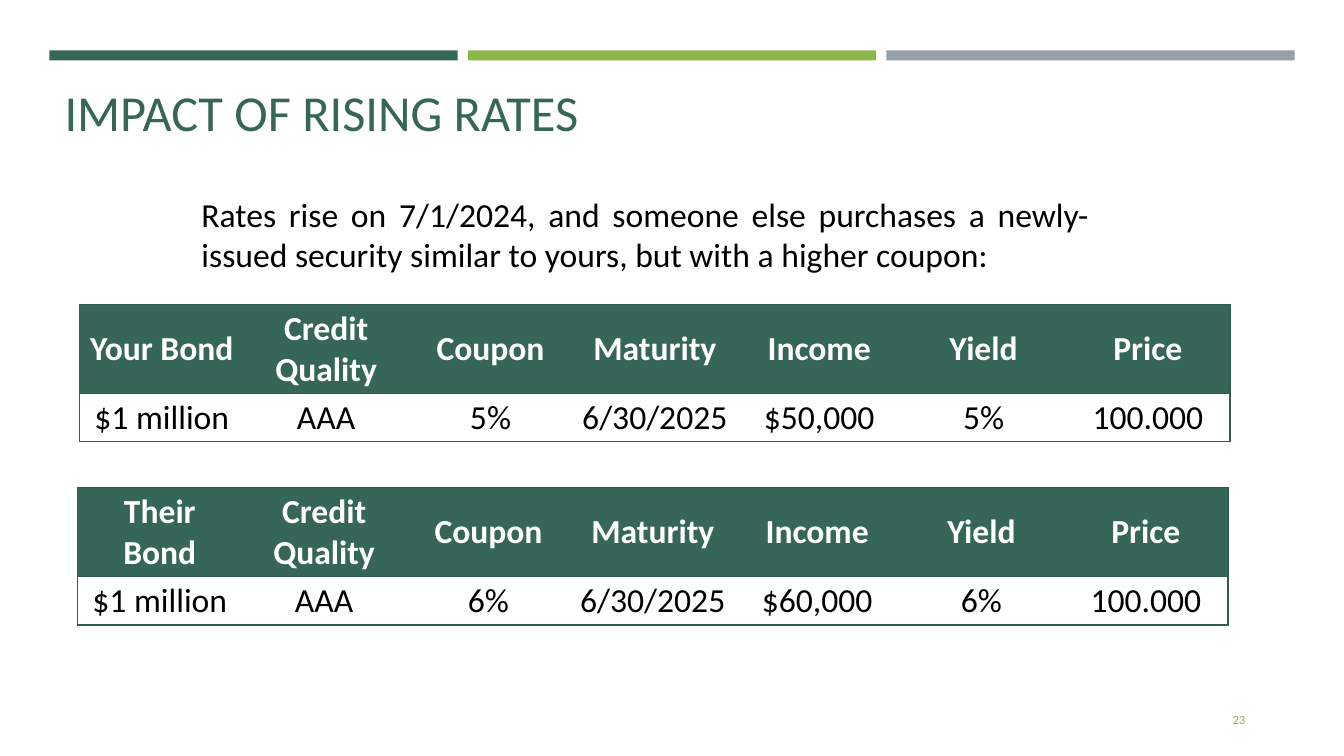
from dataclasses import dataclass

from lxml.etree import SubElement
from pptx import Presentation
from pptx.dml.color import RGBColor
from pptx.enum.shapes import MSO_SHAPE
from pptx.enum.text import MSO_ANCHOR, PP_ALIGN
from pptx.oxml.ns import qn
from pptx.util import Inches, Pt


@dataclass(frozen=True)
class Theme:
    font: str = "Calibri"
    green: str = "366658"
    lime: str = "8CB64A"
    gray: str = "969FA7"
    border: str = "315C4F"
    white: str = "FFFFFF"
    black: str = "000000"
    title_size: int = 36
    body_size: int = 24
    number_size: int = 9
    border_width: int = 1


THEME = Theme()
COLUMN_COUNT = 7
COLUMN_WIDTH = 1.63
ROW_HEIGHTS = (0.87, 0.47)
HEADINGS = ["Credit Quality", "Coupon", "Maturity", "Income", "Yield", "Price"]
YOUR_BOND = [
    ["Your Bond", *HEADINGS],
    ["$1 million", "AAA", "5%", "6/30/2025", "$50,000", "5%", "100.000"],
]
THEIR_BOND = [
    ["Their Bond", *HEADINGS],
    ["$1 million", "AAA", "6%", "6/30/2025", "$60,000", "6%", "100.000"],
]


def apply_format(target, values):
    for name, value in values.items():
        setattr(target, name, value)


def write_text(frame, text, size, color, align=PP_ALIGN.LEFT, bold=False):
    para = frame.paragraphs[0]
    para.alignment = align
    span = para.add_run()
    span.text = text
    apply_format(span.font, {"name": THEME.font, "size": Pt(size), "bold": bold})
    span.font.color.rgb = RGBColor.from_string(color)


def add_bar(slide, left, color):
    bar = slide.shapes.add_shape(
        MSO_SHAPE.RECTANGLE, Inches(left), Inches(0.5), Inches(4.05), Inches(0.1)
    )
    bar.shadow.inherit = False
    bar.fill.solid()
    bar.fill.fore_color.rgb = RGBColor.from_string(color)
    bar.line.fill.background()


def add_text(slide, area, text, size, color, align, frame_format):
    box = slide.shapes.add_textbox(*map(Inches, area))
    apply_format(box.text_frame, {"word_wrap": True, **frame_format})
    write_text(box.text_frame, text, size, color, align)


def set_borders(cell, sides):
    """Draw the named sides (L, R, T, B) and clear the others."""
    properties = cell._tc.get_or_add_tcPr()
    for side in "LRTB":
        line = SubElement(properties, qn(f"a:ln{side}"), w=str(Pt(THEME.border_width)))
        if side in sides:
            fill = SubElement(line, qn("a:solidFill"))
            SubElement(fill, qn("a:srgbClr"), val=THEME.border)
        else:
            SubElement(line, qn("a:noFill"))


def fill_cell(cell, text, is_header, sides):
    apply_format(cell, {
        "margin_left": Inches(0.07),
        "margin_right": Inches(0.07),
        "margin_top": Inches(0.04),
        "margin_bottom": Inches(0.04),
        "vertical_anchor": MSO_ANCHOR.MIDDLE if is_header else MSO_ANCHOR.TOP,
    })
    set_borders(cell, sides)
    if is_header:
        cell.fill.solid()
        cell.fill.fore_color.rgb = RGBColor.from_string(THEME.green)
    else:
        cell.fill.background()
    color = THEME.white if is_header else THEME.black
    write_text(cell.text_frame, text, THEME.body_size, color, PP_ALIGN.CENTER, is_header)


def add_bond_table(slide, left, top, rows):
    table = slide.shapes.add_table(
        len(rows), COLUMN_COUNT, Inches(left), Inches(top),
        Inches(COLUMN_COUNT * COLUMN_WIDTH), Inches(sum(ROW_HEIGHTS)),
    ).table
    apply_format(table, {"first_row": False, "horz_banding": False})
    for column in table.columns:
        column.width = Inches(COLUMN_WIDTH)
    for row_index, texts in enumerate(rows):
        table.rows[row_index].height = Inches(ROW_HEIGHTS[row_index])
        for column_index, text in enumerate(texts):
            sides = "TB"
            if column_index == 0:
                sides += "L"
            if column_index == COLUMN_COUNT - 1:
                sides += "R"
            fill_cell(table.cell(row_index, column_index), text, row_index == 0, sides)


def main():
    deck = Presentation()
    apply_format(deck, {"slide_width": Inches(13.33), "slide_height": Inches(7.5)})
    page = deck.slides.add_slide(deck.slide_layouts[6])

    for index, color in enumerate((THEME.green, THEME.lime, THEME.gray)):
        add_bar(page, 0.49 + index * 4.15, color)

    no_margins = dict.fromkeys(
        ("margin_left", "margin_right", "margin_top", "margin_bottom"), 0
    )
    add_text(page, (11.34, 6.94, 1.11, 0.4), "23", THEME.number_size, THEME.lime,
             PP_ALIGN.RIGHT, {"vertical_anchor": MSO_ANCHOR.MIDDLE})
    add_text(page, (0.64, 0.11, 12.06, 1.3), "IMPACT OF RISING RATES",
             THEME.title_size, THEME.green, PP_ALIGN.LEFT,
             {"vertical_anchor": MSO_ANCHOR.BOTTOM, **no_margins})
    add_bond_table(page, 0.79, 3.02, YOUR_BOND)
    add_text(page, (1.9, 1.87, 9, 0.91),
             "Rates rise on 7/1/2024, and someone else purchases a newly-issued "
             "security similar to yours, but with a higher coupon:",
             THEME.body_size, THEME.black, PP_ALIGN.JUSTIFY,
             {"vertical_anchor": MSO_ANCHOR.TOP})
    add_bond_table(page, 0.77, 4.84, THEIR_BOND)

    deck.save("out.pptx")


if __name__ == "__main__":
    main()
